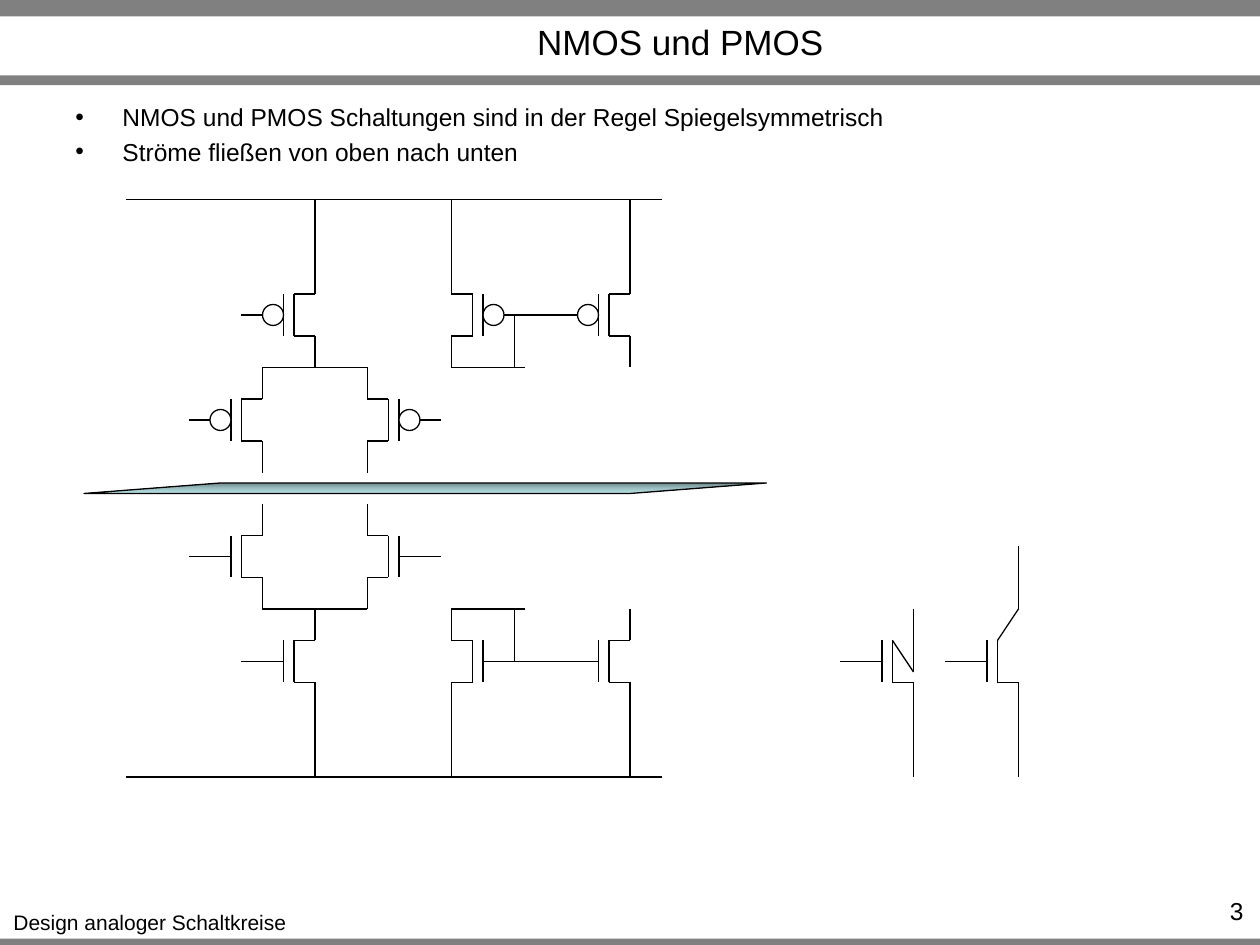
from copy import deepcopy

from pptx import Presentation
from pptx import util as u
from pptx.dml.color import RGBColor
from pptx.enum import shapes, text
from pptx.oxml.ns import qn
from lxml import etree

BLACK = RGBColor(0x00, 0x00, 0x00)
WHITE = RGBColor(0xFF, 0xFF, 0xFF)
GREY = RGBColor(0x80, 0x80, 0x80)
MIRROR_STOPS = (
    (0, RGBColor(0x6D, 0x86, 0x88)),
    (0.5, RGBColor(0x9B, 0xBF, 0xC2)),
    (1, RGBColor(0xB8, 0xE3, 0xE6)),
)
FONT = "Arial"
LINE_WIDTH = u.Pt(0.75)
GRID = u.Cm(2.54) / 12


def grid(steps):
    return u.Emu(round(steps * GRID))


def style_text(frame, size, align):
    for paragraph in frame.paragraphs:
        paragraph.alignment = align
        for run in paragraph.runs:
            run.font.name = FONT
            run.font.size = u.Pt(size)
            run.font.color.rgb = BLACK


def add_label(slide, box, words, size, align, wrap=True):
    frame = slide.shapes.add_textbox(*map(u.Cm, box)).text_frame
    frame.word_wrap = wrap
    frame.text = words
    style_text(frame, size, align)
    return frame


def add_wire(parts, x1, y1, x2, y2):
    wire = parts.add_connector(
        shapes.MSO_CONNECTOR.STRAIGHT, *map(grid, (x1, y1, x2, y2))
    )
    wire.line.color.rgb = BLACK
    wire.line.width = LINE_WIDTH
    etree.SubElement(wire._element.spPr, qn("a:effectLst"))


def add_outlined(parts, kind, x, y, width, height):
    outlined = parts.add_shape(kind, *map(grid, (x, y, width, height)))
    outlined.shadow.inherit = False
    outlined.line.color.rgb = BLACK
    outlined.line.width = LINE_WIDTH
    return outlined


def add_transistor(parts, x, y, side=-1, pmos=False, knee=-2, reach=-5):
    channel, plate, gate, lead = (x + side * step for step in (2, 3, 5, 7))
    for wire in (
        (x, y + knee, channel, y - 2),
        (channel, y - 2, channel, y + 2),
        (gate, y, plate, y),
        (plate, y - 2, plate, y + 2),
        (x, y + 2, channel, y + 2),
        (x, y + 2, x, y + 5),
        (x, y + reach, x, y + knee),
        (gate, y, lead, y),
    ):
        add_wire(parts, *wire)
    if pmos:
        bubble = add_outlined(
            parts, shapes.MSO_SHAPE.OVAL, min(plate, gate), y - 1, 2, 2
        )
        bubble.fill.solid()
        bubble.fill.fore_color.rgb = WHITE


def add_circuit_half(slide, left, rail, direction, pmos):
    parts = slide.shapes.add_group_shape().shapes
    width, tail, pair, diode, output = 51, 18, (13, 23), 31, 48

    def wire(x1, y1, x2, y2):
        add_wire(parts, left + x1, rail + direction * y1,
                 left + x2, rail + direction * y2)

    for x, depth, side in (
        (tail, 11, -1), (pair[0], 21, -1), (pair[1], 21, 1),
        (diode, 11, 1), (output, 11, -1),
    ):
        add_transistor(parts, left + x, rail + direction * depth, side, pmos)
    wire(0, 0, width, 0)
    for x in (tail, diode, output):
        wire(x, 0, x, 6)
    wire(pair[0], 16, pair[1], 16)
    wire(diode, 16, diode + 7, 16)
    wire(diode + 6, 16, diode + 6, 11)
    wire(diode + 6, 11, output - 6, 11)


def add_mirror_plane(slide, left, top, width, height):
    plane = add_outlined(slide.shapes, shapes.MSO_SHAPE.FLOWCHART_DATA,
                         left, top, width, height)
    plane.fill.gradient()
    plane.fill.gradient_angle = 270
    first_stop = plane.fill._fill._gradFill.gsLst[0]
    first_stop.addnext(deepcopy(first_stop))
    for stop, (position, colour) in zip(plane.fill.gradient_stops, MIRROR_STOPS):
        stop.position = position
        stop.color.rgb = colour


def add_bent_transistors(slide, left, top):
    for x, knee, reach in ((7, 1, -5), (17, -5, -11)):
        add_transistor(slide.shapes, left + x, top + 11, knee=knee, reach=reach)
        add_wire(slide.shapes, left + x, top + 16, left + x, top + 22)


def add_frame(slide):
    for top, height in ((18.92, 0.2), (0, 0.33), (1.52, 0.2)):
        bar = slide.shapes.add_shape(
            shapes.MSO_SHAPE.RECTANGLE, 0, u.Cm(top), u.Cm(25.4), u.Cm(height)
        )
        bar.shadow.inherit = False
        bar.fill.solid()
        bar.fill.fore_color.rgb = GREY
        bar.line.fill.background()
    add_label(slide, (0, 18.21, 6.05, 0.76), "Design analoger Schaltkreise",
              12, text.PP_ALIGN.CENTER, wrap=False)
    add_label(slide, (23.11, 17.93, 2.21, 0.61), "3", 14, text.PP_ALIGN.RIGHT)


def set_title(slide, left, top, width, height):
    title = slide.shapes.title
    title.left, title.top = u.Cm(left), u.Cm(top)
    title.width, title.height = u.Cm(width), u.Cm(height)
    title.text_frame.text = "NMOS und PMOS"
    title.text_frame.vertical_anchor = text.MSO_ANCHOR.MIDDLE
    style_text(title.text_frame, 20, text.PP_ALIGN.CENTER)


def add_statements(slide, box):
    statements = (
        "NMOS und PMOS Schaltungen sind in der Regel Spiegelsymmetrisch\n"
        "Ströme fließen von oben nach unten"
    )
    frame = add_label(slide, box, statements, 14, text.PP_ALIGN.LEFT)
    indent = u.Cm(0.95)
    for index, paragraph in enumerate(frame.paragraphs):
        if index:
            paragraph.space_before = u.Pt(3)
        properties = paragraph._p.get_or_add_pPr()
        properties.set("marL", str(indent))
        properties.set("indent", str(-indent))
        etree.SubElement(properties, qn("a:buFont"), typeface=FONT)
        etree.SubElement(properties, qn("a:buChar"), char="•")


def main():
    deck = Presentation()
    deck.slide_width, deck.slide_height = u.Cm(25.4), u.Cm(19.05)
    slide = deck.slides.add_slide(deck.slide_layouts[5])
    add_frame(slide)
    set_title(slide, 3.3, 0.36, 20.83, 0.97)
    add_statements(slide, (1.27, 1.93, 22.86, 1.24))
    add_circuit_half(slide, left=12, rail=19, direction=1, pmos=True)
    add_circuit_half(slide, left=12, rail=74, direction=-1, pmos=False)
    add_mirror_plane(slide, 8, 46, 65, 1)
    add_bent_transistors(slide, left=80, top=52)
    deck.save("out.pptx")


if __name__ == "__main__":
    main()
